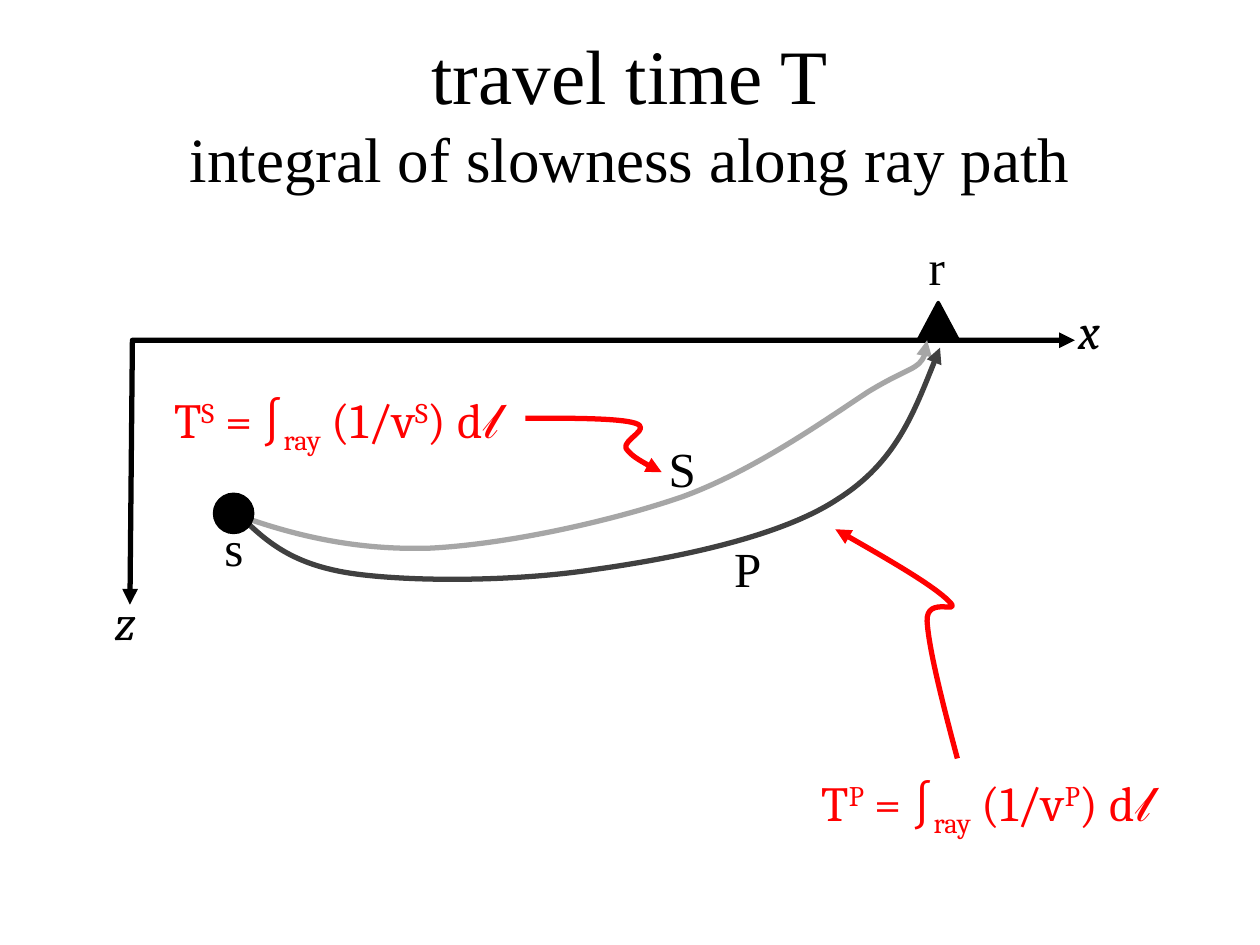
import dataclasses

import lxml.etree
import pptx
import pptx.dml.color
import pptx.enum.shapes
import pptx.enum.text
import pptx.oxml.ns
import pptx.util

Cm = pptx.util.Cm
Shape = pptx.enum.shapes.MSO_SHAPE
qn = pptx.oxml.ns.qn


@dataclasses.dataclass(frozen=True)
class Theme:
    ink: str = "000000"
    accent: str = "FF0000"
    s_ray: str = "A6A6A6"
    p_ray: str = "404040"
    serif: str = "Times New Roman"
    math: str = "Cambria"
    title: int = 44
    subtitle: int = 36
    body: int = 28
    stroke: int = 3
    outline: int = 2


def rgb(value):
    return pptx.dml.color.RGBColor.from_string(value)


def set_all(target, values):
    for name, value in values.items():
        setattr(target, name, value)


class Sketch:
    def __init__(self, page, theme):
        self.page = page
        self.theme = theme

    def text(self, left, top, width, height, paragraphs, color=None):
        box = self.page.shapes.add_textbox(Cm(left), Cm(top), Cm(width), Cm(height))
        frame = box.text_frame
        set_all(frame, {
            "word_wrap": True,
            "auto_size": pptx.enum.text.MSO_AUTO_SIZE.SHAPE_TO_FIT_TEXT,
        })
        for index, (spans, style) in enumerate(paragraphs):
            para = frame.paragraphs[0] if index == 0 else frame.add_paragraph()
            para.alignment = pptx.enum.text.PP_ALIGN.CENTER
            for content, baseline in spans:
                span = para.add_run()
                span.text = content
                set_all(span.font, style)
                span.font.color.rgb = rgb(color or self.theme.ink)
                if baseline:
                    span._r.get_or_add_rPr().set("baseline", str(baseline * 1000))

    def label(self, left, top, letter, font, italic=False):
        style = {"name": font, "size": pptx.util.Pt(self.theme.body), "italic": italic}
        self.text(left, top, 2.11, 1.45, [([(letter, 0)], style)])

    def formula(self, left, top, wave):
        spans = [("T", 0), (wave, 30), (" = ∫", 0), ("ray", -25),
                 (" (1/v", 0), (wave, 30), (") d𝓁", 0)]
        style = {"name": self.theme.math, "size": pptx.util.Pt(self.theme.body)}
        self.text(left, top, 8.89, 1.45, [(spans, style)], self.theme.accent)

    def heading(self, left, top, width, height, lines):
        paragraphs = [
            ([(content, 0)], {"name": self.theme.serif, "size": pptx.util.Pt(size)})
            for content, size in lines
        ]
        self.text(left, top, width, height, paragraphs)

    def marker(self, kind, left, top, width, height, outlined=False):
        mark = self.page.shapes.add_shape(kind, Cm(left), Cm(top), Cm(width), Cm(height))
        mark.shadow.inherit = False
        mark.fill.solid()
        mark.fill.fore_color.rgb = rgb(self.theme.ink)
        if outlined:
            mark.line.color.rgb = rgb(self.theme.ink)
            mark.line.width = pptx.util.Pt(self.theme.outline)
        else:
            mark.line.fill.background()

    def stroke(self, points, color, arrows, curved=True):
        start, *rest = [(Cm(x), Cm(y)) for x, y in points]
        builder = self.page.shapes.build_freeform(*start)
        builder.add_line_segments(rest, close=False)
        line = builder.convert_to_shape()
        line.shadow.inherit = False
        line.fill.background()
        line.line.color.rgb = rgb(color)
        line.line.width = pptx.util.Pt(self.theme.stroke)
        outline = line.line._get_or_add_ln()
        lxml.etree.SubElement(outline, qn("a:round"))
        for end in arrows:
            lxml.etree.SubElement(outline, qn(f"a:{end}End"), type="triangle")
        if curved:
            self.bend(line)

    def bend(self, line):
        segments = list(line._element.iter(qn("a:lnTo")))
        for first in range(0, len(segments), 3):
            bezier = lxml.etree.Element(qn("a:cubicBezTo"))
            segments[first].addprevious(bezier)
            for segment in segments[first:first + 3]:
                bezier.append(segment[0])
                segment.getparent().remove(segment)


def main():
    theme = Theme()
    deck = pptx.Presentation()
    set_all(deck, {"slide_width": Cm(25.4), "slide_height": Cm(19.05)})
    page = deck.slides.add_slide(deck.slide_layouts[6])
    sketch = Sketch(page, theme)

    sketch.stroke([(2.62, 12.19), (2.67, 6.86), (21.67, 6.86)],
                  theme.ink, ["head", "tail"], curved=False)
    sketch.marker(Shape.ISOSCELES_TRIANGLE, 18.52, 6.1, 0.79, 0.74, outlined=True)
    sketch.label(1.47, 11.79, "z", theme.math, italic=True)
    sketch.label(20.9, 5.94, "x", theme.math, italic=True)

    s_ray = [(4.72, 10.36),
             (5.92, 10.8), (7.19, 11.1), (8.69, 11.05),
             (10.21, 10.97), (12.29, 10.52), (13.77, 10.01),
             (15.24, 9.47), (16.69, 8.43), (17.5, 7.9),
             (18.34, 7.39), (18.67, 7.47), (18.69, 6.86)]
    p_ray = [(4.88, 10.44),
             (5.38, 10.92), (5.89, 11.38), (7.09, 11.56),
             (8.26, 11.73), (10.36, 11.73), (11.99, 11.48),
             (13.64, 11.25), (15.75, 10.82), (16.89, 10.06),
             (18.06, 9.32), (18.49, 8.15), (18.95, 7.01)]
    sketch.stroke(s_ray, theme.s_ray, ["tail"])
    sketch.stroke(p_ray, theme.p_ray, ["tail"])

    sketch.marker(Shape.OVAL, 4.29, 9.93, 0.84, 0.84)
    for left, top, letter in [(14.02, 10.74, "P"), (12.7, 8.71, "S"),
                              (3.66, 10.31, "s"), (17.83, 4.65, "r")]:
        sketch.label(left, top, letter, theme.serif)

    p_pointer = [(16.84, 10.67),
                 (17.83, 11.23), (18.82, 11.81), (19.13, 12.12),
                 (19.43, 12.42), (18.67, 11.99), (18.69, 12.52),
                 (18.72, 13.06), (19, 14.17), (19.3, 15.29)]
    s_pointer = [(10.59, 8.43),
                 (11.53, 8.43), (12.47, 8.43), (12.8, 8.53),
                 (13.16, 8.64), (12.55, 8.86), (12.62, 9.04),
                 (12.73, 9.19), (13.03, 9.37), (13.34, 9.52)]
    sketch.stroke(p_pointer, theme.accent, ["head"])
    sketch.formula(2.34, 7.72, "S")
    sketch.heading(0, 0.43, 25.4, 3.68, [
        ("travel time T", theme.title),
        ("integral of slowness along ray path", theme.subtitle),
    ])
    sketch.stroke(s_pointer, theme.accent, ["tail"])
    sketch.formula(15.44, 15.44, "P")

    deck.save("out.pptx")


if __name__ == "__main__":
    main()
